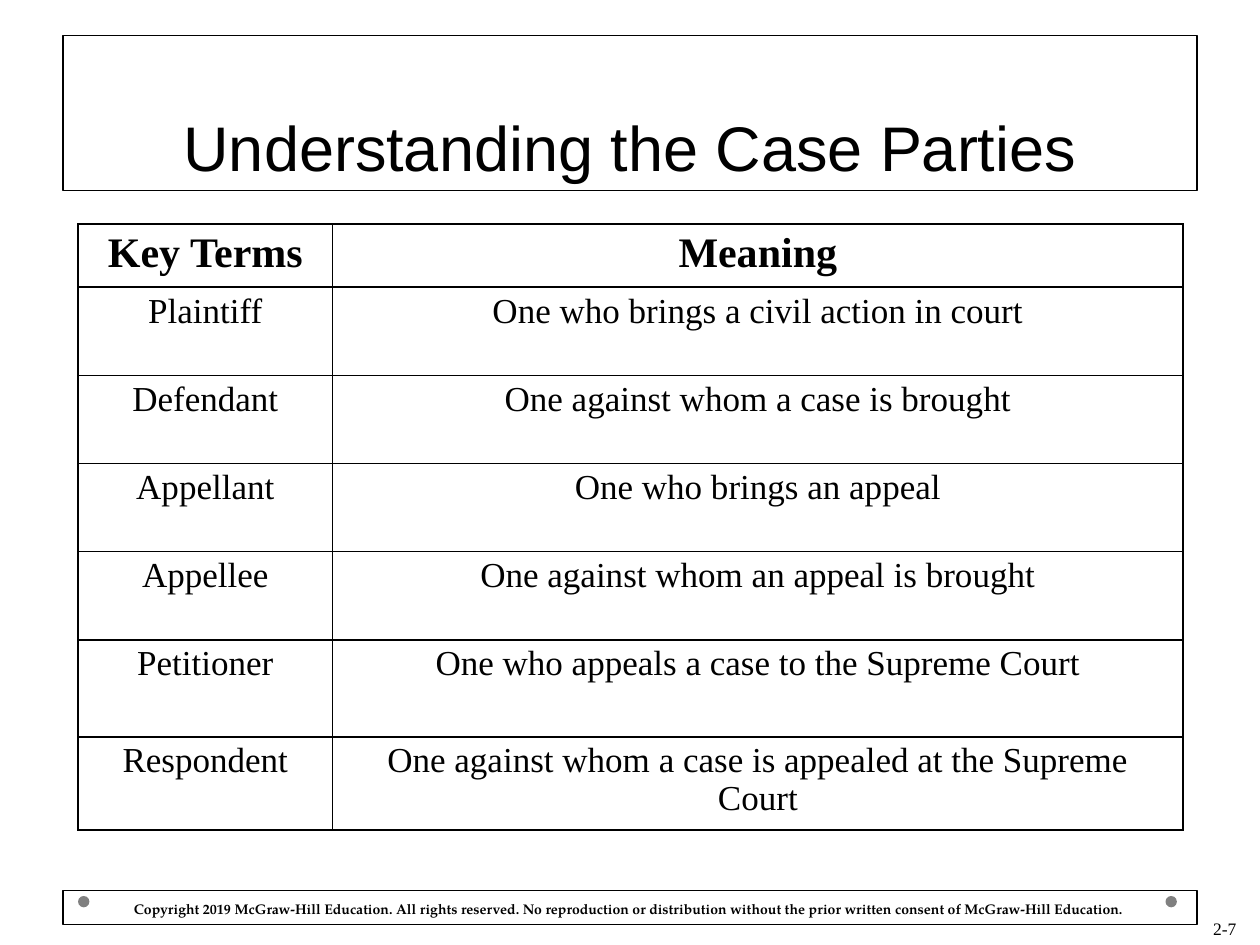
from lxml import etree
from pptx import Presentation
from pptx.dml.color import RGBColor
from pptx.enum.shapes import MSO_SHAPE
from pptx.enum.text import MSO_ANCHOR, PP_ALIGN
from pptx.oxml.ns import qn
from pptx.util import Pt

LEFT, CENTER, RIGHT = PP_ALIGN.LEFT, PP_ALIGN.CENTER, PP_ALIGN.RIGHT
TOP, BOTTOM = MSO_ANCHOR.TOP, MSO_ANCHOR.BOTTOM
RECTANGLE, OVAL = MSO_SHAPE.RECTANGLE, MSO_SHAPE.OVAL

# Content
COLORS = {"ink": "000000", "dot": "808080"}
TITLE = "Understanding the Case Parties"
TERMS = [
    ("Key Terms", "Meaning"),
    ("Plaintiff", "One who brings a civil action in court"),
    ("Defendant", "One against whom a case is brought"),
    ("Appellant", "One who brings an appeal"),
    ("Appellee", "One against whom an appeal is brought"),
    ("Petitioner", "One who appeals a case to the Supreme Court"),
    ("Respondent", "One against whom a case is appealed at the Supreme Court"),
]
COPYRIGHT = (
    "Copyright 2019 McGraw-Hill Education. All rights reserved. No reproduction or "
    "distribution without the prior written consent of McGraw-Hill Education."
)
PAGE_NUMBER = "2-7"

# Layout in points
COLUMN_WIDTHS = [145.5, 486]
ROW_HEIGHTS = [36] + [50.4] * 4 + [55.4, 51.4]
FRAME_LEFT, FRAME_WIDTH = 36, 648
DOT_LEFTS, DOT_TOP, DOT_SIZE = [44.6, 666], 512, 6.5


def color(name):
    return RGBColor.from_string(COLORS[name])


def write(frame, text, *, size, font="Times New Roman", bold=False,
          align=CENTER, spacing=None):
    para = frame.paragraphs[0]
    para.alignment = align
    para.line_spacing = spacing
    span = para.add_run()
    span.text = text
    span.font.size = Pt(size)
    span.font.name = font
    span.font.bold = bold
    span.font.color.rgb = color("ink")


def outline(shape):
    shape.fill.background()
    shape.line.color.rgb = color("ink")
    shape.line.width = Pt(0.75)


def add_borders(cell, width=1):
    properties = cell._tc.get_or_add_tcPr()
    for position, side in enumerate(("lnL", "lnR", "lnT", "lnB")):
        line = etree.Element(qn(f"a:{side}"), w=str(Pt(width)))
        fill = etree.SubElement(line, qn("a:solidFill"))
        etree.SubElement(fill, qn("a:srgbClr"), val=COLORS["ink"])
        properties.insert(position, line)


deck = Presentation()
deck.slide_width, deck.slide_height = Pt(720), Pt(540)
page = deck.slides.add_slide(deck.slide_layouts[5])

# Footer dots
for left in DOT_LEFTS:
    dot = page.shapes.add_shape(OVAL, Pt(left), Pt(DOT_TOP), Pt(DOT_SIZE), Pt(DOT_SIZE))
    dot.shadow.inherit = False
    dot.fill.solid()
    dot.fill.fore_color.rgb = color("dot")
    dot.line.fill.background()

# Page number
number = page.shapes.add_textbox(Pt(545.8), Pt(504), Pt(167.8), Pt(36)).text_frame
number.word_wrap = True
number.vertical_anchor = BOTTOM
write(number, PAGE_NUMBER, size=10, align=RIGHT)

# Title
title = page.shapes.title
title.left, title.top = Pt(FRAME_LEFT), Pt(20.2)
title.width, title.height = Pt(FRAME_WIDTH), Pt(88.6)
outline(title)
title.text_frame.vertical_anchor = BOTTOM
write(title.text_frame, TITLE, size=36, font="Arial")

# Key terms table
table = page.shapes.add_table(
    len(TERMS), len(COLUMN_WIDTHS), Pt(44.6), Pt(128),
    Pt(sum(COLUMN_WIDTHS)), Pt(sum(ROW_HEIGHTS))).table
table.horz_banding = False
for column, width in zip(table.columns, COLUMN_WIDTHS):
    column.width = Pt(width)
for index, (row, height, texts) in enumerate(zip(table.rows, ROW_HEIGHTS, TERMS)):
    row.height = Pt(height)
    header = index == 0
    for cell, text in zip(row.cells, texts):
        cell.fill.background()
        add_borders(cell)
        write(cell.text_frame, text, size=24 if header else 20, bold=header,
              spacing=None if header else 0.96)

# Copyright line
footer = page.shapes.add_shape(RECTANGLE, Pt(FRAME_LEFT), Pt(509), Pt(FRAME_WIDTH), Pt(19.5))
footer.shadow.inherit = False
outline(footer)
notice = footer.text_frame
notice.word_wrap = True
notice.vertical_anchor = TOP
notice.margin_left, notice.margin_top = Pt(40.5), Pt(5.5)
notice.margin_right = notice.margin_bottom = 0
write(notice, COPYRIGHT, size=8, font="TeX Gyre Pagella", bold=True, align=LEFT)

deck.save("out.pptx")
